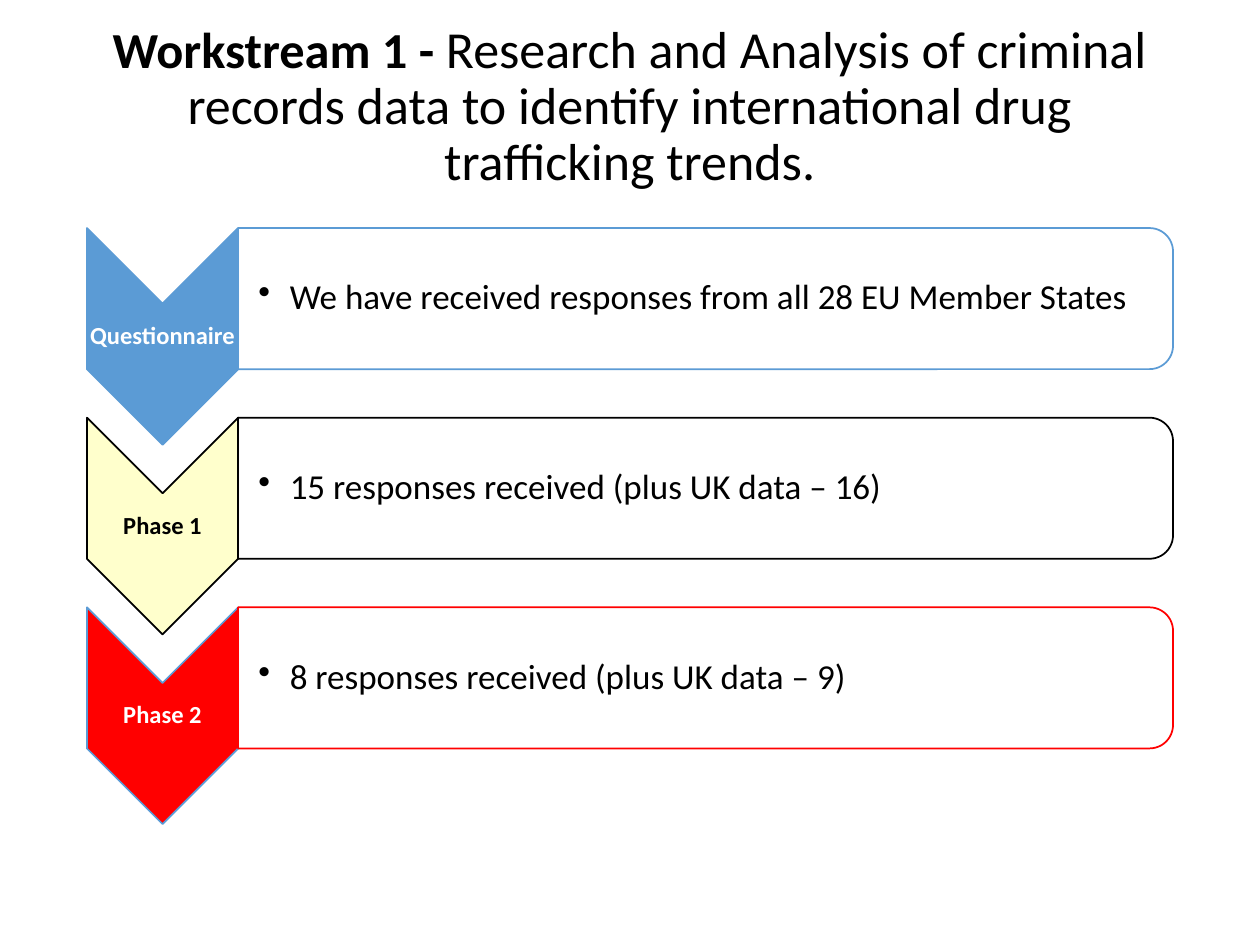
from dataclasses import dataclass

from lxml import etree
from pptx import Presentation
from pptx.dml.color import RGBColor
from pptx.enum.shapes import MSO_SHAPE
from pptx.enum.text import MSO_ANCHOR, PP_ALIGN
from pptx.oxml.ns import qn
from pptx.util import Inches, Pt

CHEVRON, PANEL = MSO_SHAPE.CHEVRON, MSO_SHAPE.ROUND_2_SAME_RECTANGLE
MIDDLE = MSO_ANCHOR.MIDDLE
CENTER, LEFT = PP_ALIGN.CENTER, PP_ALIGN.LEFT


@dataclass(frozen=True)
class Theme:
    font: str = "Calibri"
    black: str = "000000"
    white: str = "FFFFFF"
    blue: str = "5B9BD5"
    cream: str = "FFFFCC"
    red: str = "FF0000"
    lead_size: float = 28.8
    title_size: float = 29.7
    label_size: float = 14
    body_size: float = 20
    line_width: float = 1
    line_spacing: float = 0.9


@dataclass(frozen=True)
class Grid:
    """Two columns and evenly pitched rows, in inches."""
    left: float = 0.69
    label_width: float = 1.2
    panel_width: float = 7.42
    top: float = 1.81
    pitch: float = 1.505
    chevron_height: float = 1.72
    panel_height: float = 1.12

    @property
    def panel_left(self) -> float:
        return self.left + self.label_width

    def row_top(self, row: int) -> float:
        return self.top + row * self.pitch


@dataclass(frozen=True)
class Box:
    left: float
    top: float
    width: float
    height: float

    def inches(self) -> list:
        return [Inches(v) for v in (self.left, self.top, self.width, self.height)]

    def turned(self) -> "Box":
        """Frame that covers this box once rotated by 90 degrees."""
        shift = (self.width - self.height) / 2
        return Box(self.left + shift, self.top - shift, self.height, self.width)


@dataclass(frozen=True)
class Stage:
    label: str
    detail: str
    fill: str
    chevron_line: str
    panel_line: str
    label_color: str


@dataclass(frozen=True)
class TextRun:
    text: str
    size: float
    color: str
    bold: bool = False


THEME, GRID = Theme(), Grid()

STAGES = [
    Stage("Questionnaire", "We have received responses from all 28 EU Member States",
          THEME.blue, THEME.blue, THEME.blue, THEME.white),
    Stage("Phase 1", "15 responses received (plus UK data – 16)",
          THEME.cream, THEME.black, THEME.black, THEME.black),
    Stage("Phase 2", "8 responses received (plus UK data – 9)",
          THEME.red, THEME.blue, THEME.red, THEME.white),
]


def add_turned_shape(slide, kind, box: Box, fill: str, line: str):
    sp = slide.shapes.add_shape(kind, *box.turned().inches())
    sp.rotation = 90
    sp.shadow.inherit = False
    sp.fill.solid()
    sp.fill.fore_color.rgb = RGBColor.from_string(fill)
    sp.line.color.rgb = RGBColor.from_string(line)
    sp.line.width = Pt(THEME.line_width)
    return sp


def set_alpha(sp, percent: int) -> None:
    color = sp.fill._xPr.find(qn("a:solidFill"))[0]
    etree.SubElement(color, qn("a:alpha"), val=str(percent * 1000))


def add_bullet(p, indent: float) -> None:
    pPr = p._p.get_or_add_pPr()
    pPr.set("marL", str(Inches(indent)))
    pPr.set("indent", str(-Inches(indent)))
    etree.SubElement(pPr, qn("a:buChar"), char="•")


def add_text(slide, box: Box, runs: list[TextRun], align, margin: float = 0.01,
             left_margin: float = 0.01):
    tf = slide.shapes.add_textbox(*box.inches()).text_frame
    tf.word_wrap = True
    tf.vertical_anchor = MIDDLE
    tf.margin_left = Inches(left_margin)
    tf.margin_right = tf.margin_top = tf.margin_bottom = Inches(margin)
    p = tf.paragraphs[0]
    p.alignment = align
    p.line_spacing = THEME.line_spacing
    for part in runs:
        r = p.add_run()
        r.text = part.text
        r.font.name = THEME.font
        r.font.size = Pt(part.size)
        r.font.bold = part.bold
        r.font.color.rgb = RGBColor.from_string(part.color)
    return p


def add_stage(slide, row: int, stage: Stage) -> None:
    top = GRID.row_top(row)
    chevron = Box(GRID.left, top, GRID.label_width, GRID.chevron_height)
    panel = Box(GRID.panel_left, top, GRID.panel_width, GRID.panel_height)
    notch = GRID.label_width / 2

    add_turned_shape(slide, CHEVRON, chevron, stage.fill, stage.chevron_line)
    add_text(slide, Box(GRID.left, top + notch, GRID.label_width,
                        GRID.chevron_height - 2 * notch),
             [TextRun(stage.label, THEME.label_size, stage.label_color, True)], CENTER)
    sp = add_turned_shape(slide, PANEL, panel, THEME.white, stage.panel_line)
    set_alpha(sp, 90)
    inset = 0.05
    p = add_text(slide, Box(panel.left, top + inset, panel.width - inset,
                            panel.height - 2 * inset),
                 [TextRun(stage.detail, THEME.body_size, THEME.black)], LEFT,
                 left_margin=0.16)
    add_bullet(p, 0.25)


def main() -> None:
    prs = Presentation()
    prs.slide_width, prs.slide_height = Inches(10), Inches(7.5)
    slide = prs.slides.add_slide(prs.slide_layouts[6])
    add_text(slide, Box(GRID.left, 0.15, GRID.label_width + GRID.panel_width, 1.41), [
        TextRun("Workstream 1 - ", THEME.lead_size, THEME.black, True),
        TextRun("Research and Analysis of criminal records data to identify "
                "international drug trafficking trends.", THEME.title_size, THEME.black),
    ], CENTER, margin=0.1, left_margin=0.1)
    for row, stage in enumerate(STAGES):
        add_stage(slide, row, stage)
    prs.save("out.pptx")


if __name__ == "__main__":
    main()
